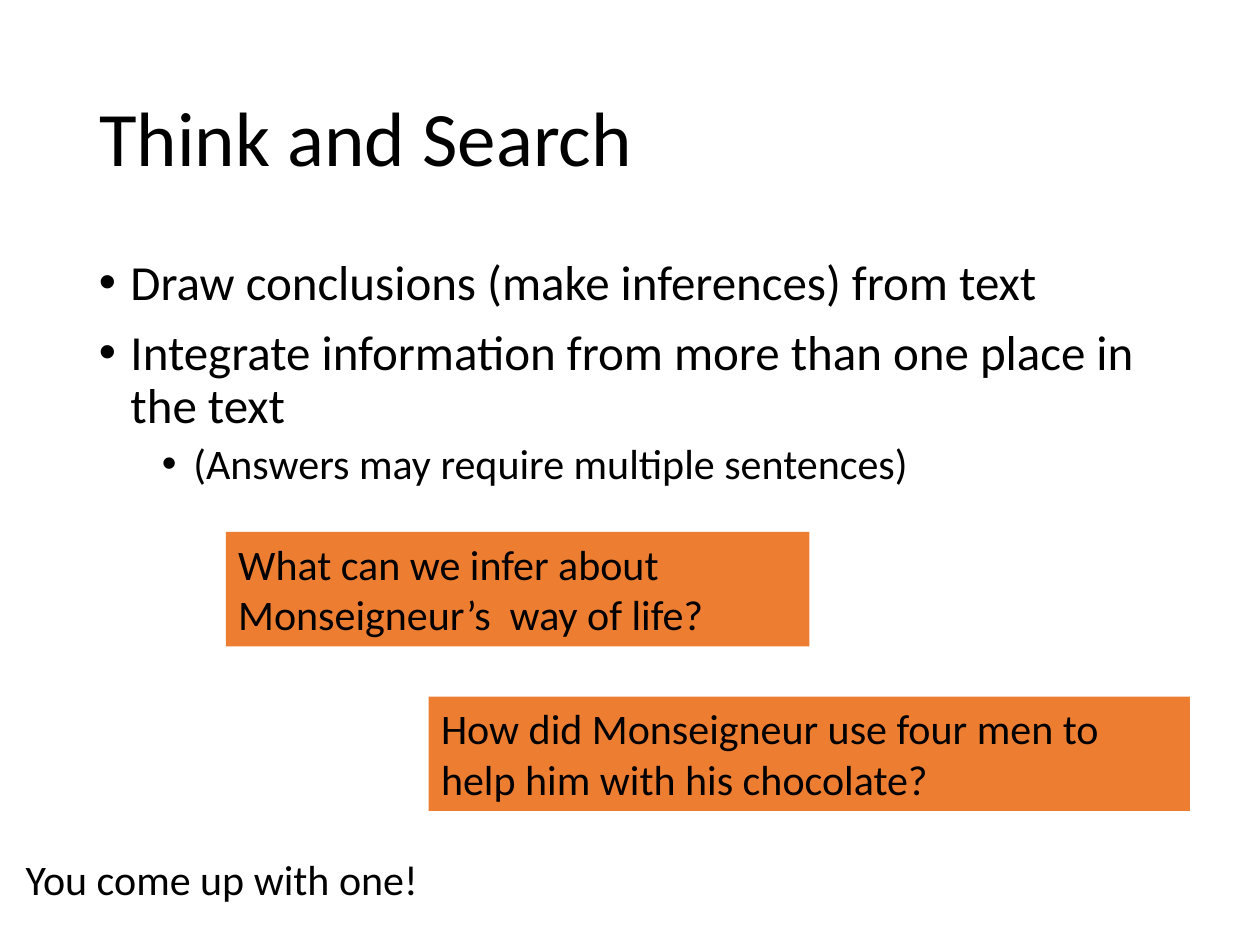
from lxml import etree
from pptx import Presentation
from pptx import util as u
from pptx.dml.color import RGBColor
from pptx.enum import shapes, text
from pptx.oxml.ns import qn

COLORS = {"ink": "000000", "question": "ED7D31"}


class Deck:
    font_name = "Calibri"

    def __init__(self, width, height):
        self.presentation = Presentation()
        self.presentation.slide_width = u.Pt(width)
        self.presentation.slide_height = u.Pt(height)
        title_only = self.presentation.slide_layouts[5]
        self.slide = self.presentation.slides.add_slide(title_only)

    def apply(self, target, values):
        for attribute, value in values.items():
            setattr(target, attribute, value)

    def add_words(self, paragraph, words, size, **spacing):
        run = paragraph.add_run()
        run.text = words
        self.apply(run.font, {"name": self.font_name, "size": u.Pt(size)})
        run.font.color.rgb = RGBColor.from_string(COLORS["ink"])
        self.apply(paragraph, {"alignment": text.PP_ALIGN.LEFT, **spacing})

    def title(self, words, left, top, width, height):
        heading = self.slide.shapes.title
        place = {"left": left, "top": top, "width": width, "height": height}
        self.apply(heading, {side: u.Pt(value) for side, value in place.items()})
        self.apply(heading.text_frame, {
            "vertical_anchor": text.MSO_ANCHOR.MIDDLE,
            "auto_size": text.MSO_AUTO_SIZE.NONE,
        })
        self.add_words(heading.text_frame.paragraphs[0], words, 44, line_spacing=0.9)

    def text_box(self, box, wrap=True):
        frame = self.slide.shapes.add_textbox(*map(u.Pt, box)).text_frame
        frame.word_wrap = wrap
        return frame

    def bullets(self, points, *box):
        frame = self.text_box(box)
        for index, (level, words) in enumerate(points):
            paragraph = frame.add_paragraph() if index else frame.paragraphs[0]
            self.add_words(paragraph, words, 28 - 4 * level, level=level,
                           line_spacing=0.9, space_before=u.Pt(10 - 5 * level))
            properties = paragraph._p.get_or_add_pPr()
            properties.set("marL", str(u.Pt(18 + 36 * level)))
            properties.set("indent", str(u.Pt(-18)))
            etree.SubElement(properties, qn("a:buFont"), typeface="Arial")
            etree.SubElement(properties, qn("a:buChar"), char="•")

    def question(self, words, *box):
        panel = self.slide.shapes.add_shape(
            shapes.MSO_SHAPE.RECTANGLE, *map(u.Pt, box))
        panel.shadow.inherit = False
        panel.fill.solid()
        panel.fill.fore_color.rgb = RGBColor.from_string(COLORS["question"])
        panel.line.fill.background()
        self.apply(panel.text_frame, {
            "word_wrap": True,
            "vertical_anchor": text.MSO_ANCHOR.TOP,
            "auto_size": text.MSO_AUTO_SIZE.SHAPE_TO_FIT_TEXT,
        })
        self.add_words(panel.text_frame.paragraphs[0], words, 24)

    def prompt(self, words, *box):
        frame = self.text_box(box, wrap=False)
        self.add_words(frame.paragraphs[0], words, 24)


def main():
    deck = Deck(720, 540)
    deck.title("Think and Search", 49.5, 28.75, 621, 104.4)
    deck.bullets([
        (0, "Draw conclusions (make inferences) from text"),
        (0, "Integrate information from more than one place in the text"),
        (1, "(Answers may require multiple sentences)"),
    ], 49.5, 143.75, 621, 342.6)
    deck.question("What can we infer about Monseigneur’s  way of life?",
                  129, 304, 333.5, 65.4)
    deck.question("How did Monseigneur use four men to help him with his chocolate?",
                  245, 398, 435, 65.4)
    deck.prompt("You come up with one!", 7.6, 484, 289.5, 36)
    deck.presentation.save("out.pptx")


if __name__ == "__main__":
    main()
